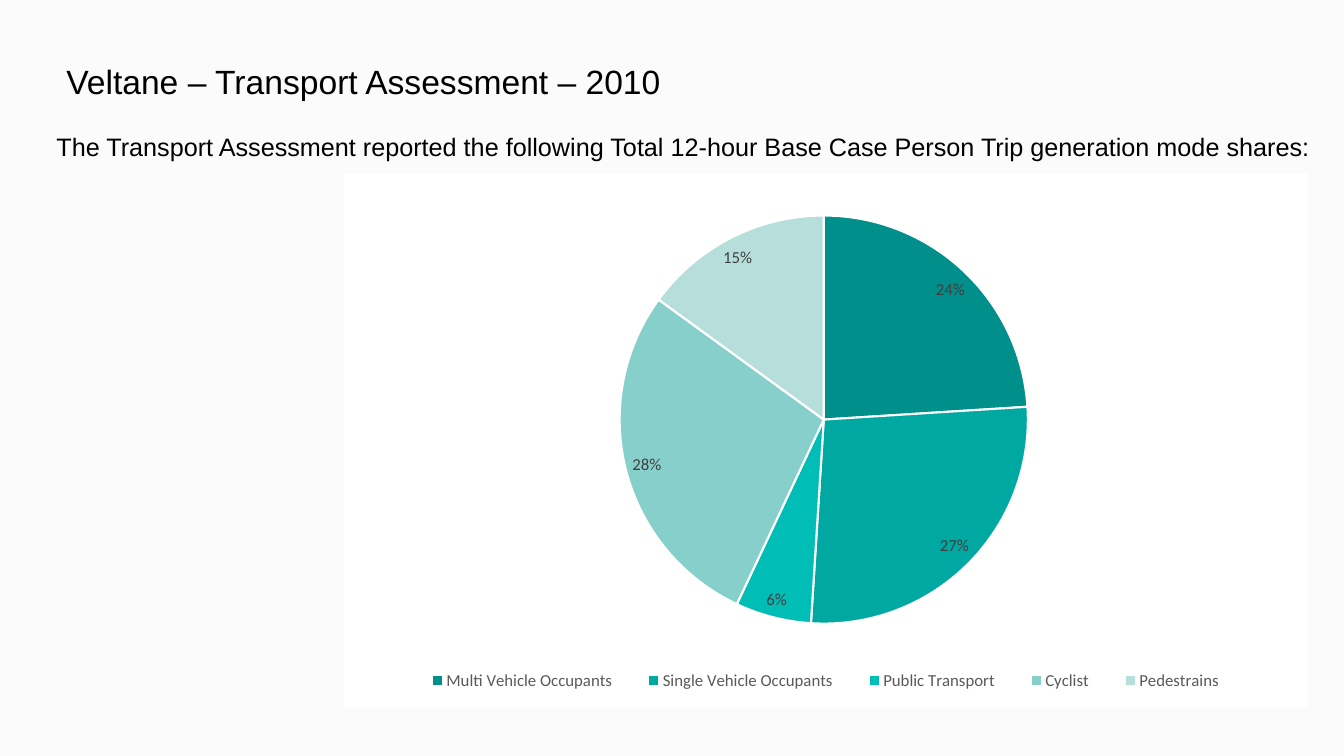
"""Build a slide with a pie chart of travel mode shares."""
from dataclasses import dataclass

from pptx import Presentation
from pptx.chart.data import CategoryChartData as Data
from pptx.dml.color import RGBColor as Color
from pptx.enum.chart import XL_CHART_TYPE as Kind
from pptx.enum.chart import XL_LABEL_POSITION as Spot
from pptx.enum.chart import XL_LEGEND_POSITION as Side
from pptx.enum.shapes import MSO_SHAPE as Form
from pptx.oxml import parse_xml
from pptx.oxml.ns import nsdecls, qn
from pptx.slide import Slide
from pptx.util import Inches, Pt

HUES = {
    "veil": "F2F2F2", "white": "FFFFFF", "black": "000000",
    "label": "404040", "legend": "595959",
    "multi": "008F8A", "single": "00A8A2", "public": "00BDB6",
    "cycle": "87CFCA", "walk": "B6DFDC",
}


@dataclass
class Note:
    text: str
    box: tuple[float, float, float, float]
    size: int
    inset: tuple[float, float]
    pitch: float
    after: int


@dataclass
class Share:
    name: str
    value: float
    hue: str


NOTES = [
    Note("The Transport Assessment reported the following Total 12-hour "
         "Base Case Person Trip generation mode shares:",
         (0.56, 1.3, 12.59, 0.83), 18, (0, 0), 1, 12),
    Note("Veltane – Transport Assessment – 2010",
         (0.56, 0.6, 11.06, 0.5), 24, (0.1, 0.05), 0.9, 0),
]
SHARES = [
    Share("Multi Vehicle Occupants", 0.24, "multi"),
    Share("Single Vehicle Occupants", 0.27, "single"),
    Share("Public Transport", 0.06, "public"),
    Share("Cyclist", 0.28, "cycle"),
    Share("Pedestrains", 0.15, "walk"),
]
FRAME = (3.41, 1.72, 9.56, 5.3)
PLOT = (0.286, 0.079, 0.424, 0.764)
KEY = (0.06, 0.91, 0.88, 0.08)


def tint(name: str) -> Color:
    return Color.from_string(HUES[name])


def style(font, size: int, hue: str, face: str) -> None:
    font.size, font.name = Pt(size), face
    font.color.rgb = tint(hue)


def add_veil(slide: Slide, wide: int, high: int) -> None:
    veil = slide.shapes.add_shape(Form.RECTANGLE, 0, 0, wide, high)
    veil.shadow.inherit = False
    veil.fill.solid()
    veil.fill.fore_color.rgb = tint("veil")
    veil.line.fill.background()
    shade = veil.element.spPr.find(qn("a:solidFill"))[0]
    shade.append(parse_xml(f'<a:alpha {nsdecls("a")} val="30000"/>'))


def add_note(slide: Slide, note: Note) -> None:
    frame = slide.shapes.add_textbox(*map(Inches, note.box)).text_frame
    frame.word_wrap = True
    across, down = map(Inches, note.inset)
    frame.margin_left = frame.margin_right = across
    frame.margin_top = frame.margin_bottom = down
    para = frame.paragraphs[0]
    para.line_spacing, para.space_after = note.pitch, Pt(note.after)
    run = para.add_run()
    run.text = note.text
    style(run.font, note.size, "black", "Arial")


def add_pie(slide: Slide) -> None:
    data = Data(number_format="0%")
    data.categories = [share.name for share in SHARES]
    data.add_series("Series 1", [share.value for share in SHARES])
    chart = slide.shapes.add_chart(
        Kind.PIE, *map(Inches, FRAME), data).chart
    chart.has_title = False
    style(chart.font, 10, "black", "Calibri")
    chart.has_legend = True
    key = chart.legend
    key.position, key.include_in_layout = Side.BOTTOM, False
    style(key.font, 12, "legend", "Calibri")

    plot = chart.plots[0]
    plot.vary_by_categories = True
    series = plot.series[0]
    for index, share in enumerate(SHARES):
        look = series.points[index].format
        look.fill.solid()
        look.fill.fore_color.rgb = tint(share.hue)
        look.line.color.rgb = tint("white")
        look.line.width = Pt(1.5)
    labels = series.data_labels
    labels.show_value, labels.show_percentage = True, False
    labels.number_format, labels.number_format_is_linked = "0%", False
    labels.position = Spot.BEST_FIT
    style(labels.font, 12, "label", "Calibri")
    set_area(chart.element)


def set_area(root) -> None:
    body = root.find(qn("c:chart"))
    body.addnext(parse_xml(
        f'<c:spPr {nsdecls("c", "a")}><a:solidFill>'
        f'<a:srgbClr val="{HUES["white"]}"/></a:solidFill>'
        '<a:ln><a:noFill/></a:ln></c:spPr>'))
    place(body.find(qn("c:plotArea")), 0, PLOT,
          '<c:layoutTarget val="inner"/>')
    place(body.find(qn("c:legend")), 1, KEY)


def place(part, index: int, box: tuple[float, ...], aim: str = "") -> None:
    for old in part.findall(qn("c:layout")):
        part.remove(old)
    modes = "".join(f'<c:{side}Mode val="edge"/>' for side in "xy")
    sizes = "".join(f'<c:{side} val="{size}"/>'
                    for side, size in zip("xywh", box))
    part.insert(index, parse_xml(
        f'<c:layout {nsdecls("c")}><c:manualLayout>'
        f'{aim}{modes}{sizes}</c:manualLayout></c:layout>'))


def main() -> None:
    deck = Presentation()
    deck.slide_width, deck.slide_height = Inches(13.33), Inches(7.5)
    slide = deck.slides.add_slide(deck.slide_layouts[6])
    add_veil(slide, deck.slide_width, deck.slide_height)
    add_pie(slide)
    for note in NOTES:
        add_note(slide, note)
    deck.save("out.pptx")


if __name__ == "__main__":
    main()
